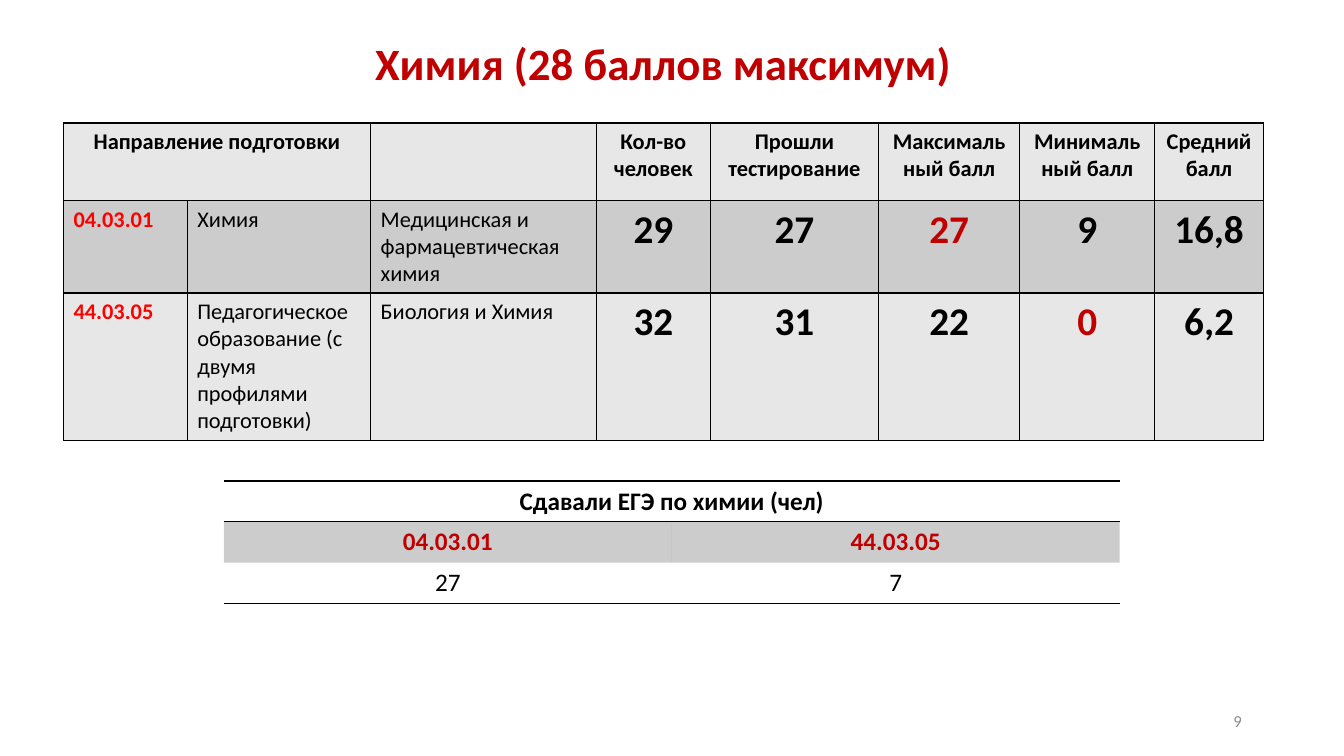
from dataclasses import dataclass

from lxml.etree import SubElement as Sub
from pptx import Presentation as Deck
from pptx.dml.color import RGBColor as Rgb
from pptx.enum.text import MSO_ANCHOR as Anchor, PP_ALIGN as Align
from pptx.oxml.ns import qn
from pptx.util import Cm, Pt

HUES = {
    "black": "000000",
    "deep": "C00000",
    "red": "FF0000",
    "light": "E7E7E7",
    "dark": "CCCCCC",
    "gray": "8C8C8C",
}
FONT = "Calibri"


@dataclass
class Style:
    size: int
    bold: bool = False
    hue: str = "black"
    align: Align = Align.CENTER


@dataclass
class Item:
    text: str
    style: Style
    fill: str = ""
    edges: str = "LRTB"
    alpha: int = 100


@dataclass
class Grid:
    left: float
    top: float
    cols: list[float]
    rows: list[float]
    items: list[list[Item]]


HEAD = Style(16, True)
CODE = Style(16, True, "red", Align.LEFT)
NOTE = Style(16, align=Align.LEFT)
MARK = Style(28, True)
PEAK = Style(28, True, "deep")


def write(frame, text: str, style: Style) -> None:
    frame.text = text
    line = frame.paragraphs[0]
    line.alignment = style.align
    if not line.runs:
        return
    font = line.runs[0].font
    form = {"name": FONT, "size": Pt(style.size), "bold": style.bold}
    for key, val in form.items():
        setattr(font, key, val)
    font.color.rgb = Rgb.from_string(HUES[style.hue])


def border(cell, edges: str) -> None:
    props = cell._tc.get_or_add_tcPr()
    for side in "LRTB":
        line = Sub(props, qn(f"a:ln{side}"), w=str(Pt(1)))
        if side in edges:
            solid = Sub(line, qn("a:solidFill"))
            Sub(solid, qn("a:srgbClr"), val=HUES["black"])
        else:
            Sub(line, qn("a:noFill"))


def paint(cell, item: Item) -> None:
    if not item.fill:
        cell.fill.background()
        return
    cell.fill.solid()
    cell.fill.fore_color.rgb = Rgb.from_string(HUES[item.fill])
    if item.alpha < 100:
        tint = cell._tc.tcPr.find(f"{qn('a:solidFill')}/{qn('a:srgbClr')}")
        Sub(tint, qn("a:alpha"), val=str(item.alpha * 1000))


def draw(slide, grid: Grid) -> None:
    frame = slide.shapes.add_table(
        len(grid.rows), len(grid.cols), Cm(grid.left), Cm(grid.top),
        Cm(sum(grid.cols)), Cm(sum(grid.rows)))
    table = frame.table
    for key, val in {"first_row": False, "horz_banding": False}.items():
        setattr(table, key, val)
    for col, width in zip(table.columns, grid.cols):
        col.width = Cm(width)
    for row, height in zip(table.rows, grid.rows):
        row.height = Cm(height)
    for r, line in enumerate(grid.items):
        for c, item in enumerate(line):
            cell = table.cell(r, c)
            write(cell.text_frame, item.text, item.style)
            border(cell, item.edges)
            paint(cell, item)
    # Both tables join the first two cells of the top row
    table.cell(0, 0).merge(table.cell(0, 1))


def band(texts: list[str], styles: list[Style], fill: str) -> list[Item]:
    return [Item(text, style, fill) for text, style in zip(texts, styles)]


def main() -> None:
    deck = Deck()
    for key, val in {"slide_width": Cm(33.87), "slide_height": Cm(19.05)}.items():
        setattr(deck, key, val)
    slide = deck.slides.add_slide(deck.slide_layouts[5])

    # Title
    title = slide.shapes.title
    place = {"left": Cm(9.12), "top": Cm(0.76), "width": Cm(15.19), "height": Cm(1.63)}
    for key, val in place.items():
        setattr(title, key, val)
    write(title.text_frame, "Химия (28 баллов максимум)", Style(32, True, "deep"))
    title.text_frame.word_wrap = False

    # Test scores
    lead = [CODE, NOTE, NOTE]
    scores = [
        band(["Направление подготовки", "", "", "Кол-во человек",
              "Прошли тестирование", "Максимальный балл",
              "Минимальный балл", "Средний балл"], [HEAD] * 8, "light"),
        band(["04.03.01", "Химия", "Медицинская и фармацевтическая химия",
              "29", "27", "27", "9", "16,8"],
             lead + [MARK, MARK, PEAK, MARK, MARK], "dark"),
        band(["44.03.05",
              "Педагогическое образование (с двумя профилями подготовки)",
              "Биология и Химия", "32", "31", "22", "0", "6,2"],
             lead + [MARK, MARK, MARK, PEAK, MARK], "light"),
    ]
    draw(slide, Grid(1.6, 3.1, [3.12, 4.62, 5.69, 2.87, 4.24, 3.56, 3.4, 2.74],
                     [1.96, 2.3, 3.64], scores))

    # Exam takers
    top, code, count = Style(18, True), Style(18, True, "deep"), Style(18)
    takers = [
        [Item(text, top, edges="TB") for text in ("Сдавали ЕГЭ по химии (чел)", "")],
        [Item(text, code, "black", "T", 20) for text in ("04.03.01", "44.03.05")],
        [Item(text, count, edges="B") for text in ("27", "7")],
    ]
    draw(slide, Grid(5.64, 12.12, [11.29] * 2, [1.03] * 3, takers))

    # Page number
    page = slide.shapes.add_textbox(Cm(23.93), Cm(17.65), Cm(7.62), Cm(1.02)).text_frame
    write(page, "9", Style(12, hue="gray", align=Align.RIGHT))
    for key, val in {"word_wrap": True, "vertical_anchor": Anchor.MIDDLE}.items():
        setattr(page, key, val)

    deck.save("out.pptx")


if __name__ == "__main__":
    main()
